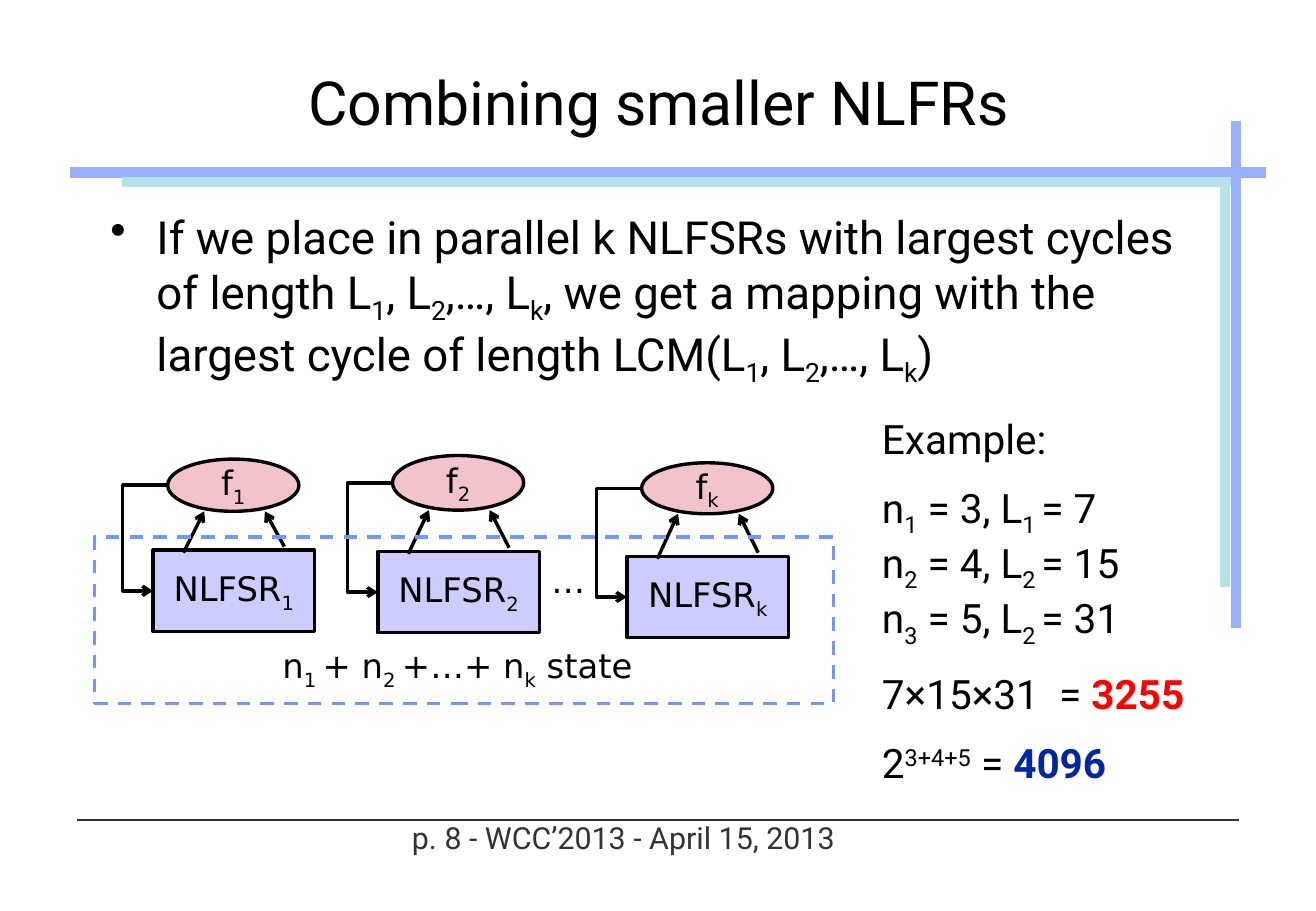
from lxml.etree import SubElement
from pptx import Presentation
from pptx.dml.color import RGBColor
from pptx.enum.dml import MSO_LINE
from pptx.enum.shapes import MSO_CONNECTOR as LINK, MSO_SHAPE as SHAPE
from pptx.enum.text import MSO_ANCHOR as ANCHOR, MSO_AUTO_SIZE as FIT, PP_ALIGN as ALIGN
from pptx.oxml.ns import qn
from pptx.util import Inches, Pt

SANS, DIAGRAM = "Roboto", "DejaVu Sans"
BLACK = "000000"

# Between bars the text is lowered, between carets it is raised.
TITLE = "Combining smaller NLFRs"
FOOTER = "p. 8 - WCC’2013 - April 15, 2013"
CLAIM = ("If we place in parallel k NLFSRs with largest cycles of length "
         "L|1|, L|2|,…, L|k|, we get a mapping with the largest cycle of length "
         "LCM(L|1|, L|2|,…, L|k|)")
STATE = "n|1 |+ n|2 |+…+ n|k| state"
# text, highlighted result, its colour, paragraph spacing
EXAMPLE = [
    ("Example:", "", BLACK, {"space_after": Pt(12)}),
    ("n|1| = 3, L|1 |= 7", "", BLACK, {}),
    ("n|2| = 4, L|2 |= 15", "", BLACK, {}),
    ("n|3| = 5, L|2 |= 31", "", BLACK, {}),
    ("7×15×31  = ", "3255", "FF0000", {"space_before": Pt(12)}),
    ("2^3+4+5^ = ", "4096", "00279F", {"space_before": Pt(12)}),
]
# index, box left, box top, oval top, oval height
REGISTERS = [("1", 1.26, 4.53, 3.78, 0.43),
             ("2", 3.11, 4.54, 3.75, 0.45),
             ("k", 5.16, 4.58, 3.81, 0.42)]
# start, end, colour, width in points
RULES = [((0.63, 6.75), (10.2, 6.75), "333333", 1.5),
         ((0.58, 1.42), (10.42, 1.42), "99B1FF", 6),
         ((1, 1.5), (10.17, 1.5), "B5E1E7", 6),
         ((10.08, 1.5), (10.08, 4.83), "B5E1E7", 6),
         ((10.17, 1), (10.17, 5.17), "99B1FF", 6)]
BOX_WIDTH, BOX_HEIGHT = 1.33, 0.67
OVAL_INSET, OVAL_WIDTH = 0.12, 1.08
LOOP_REACH = 0.25

deck = Presentation()
deck.slide_width, deck.slide_height = Inches(10.83), Inches(7.5)
page = deck.slides.add_slide(deck.slide_layouts[5])


def color(value):
    return RGBColor.from_string(value)


def assign(target, values):
    for name, value in values.items():
        setattr(target, name, value)


def add_run(para, text, size, font, ink=BLACK, bold=False, baseline=0):
    run = para.add_run()
    run.text = text
    assign(run.font, {"size": Pt(size), "name": font, "bold": bold})
    run.font.color.rgb = color(ink)
    if baseline:
        run._r.get_or_add_rPr().set("baseline", str(baseline * 1000))


def write(para, text, size, font, ink=BLACK):
    """Add text to a paragraph, turning |x| into subscript and ^x^ into superscript."""
    mark, shift = ("^", 30) if "^" in text else ("|", -25)
    for index, part in enumerate(text.split(mark)):
        if part:
            add_run(para, part, size, font, ink, baseline=shift * (index % 2))


def set_frame(frame, inset=None, **values):
    assign(frame, values)
    if inset is not None:
        assign(frame, {f"margin_{side}": Inches(inset)
                       for side in ("left", "top", "right", "bottom")})


def text_box(place, inset=None, wrap=True):
    box = page.shapes.add_textbox(*map(Inches, place))
    set_frame(box.text_frame, inset, word_wrap=wrap)
    return box.text_frame


def label(frame, text, size, font, ink=BLACK, align=ALIGN.CENTER):
    para = frame.paragraphs[0]
    para.alignment = align
    write(para, text, size, font, ink)


def draw_shape(kind, place, fill=None, ink=BLACK):
    shape = page.shapes.add_shape(kind, *map(Inches, place))
    shape.shadow.inherit = False
    if fill:
        shape.fill.solid()
        shape.fill.fore_color.rgb = color(fill)
    else:
        shape.fill.background()
    shape.line.color.rgb = color(ink)
    shape.line.width = Pt(2)
    return shape


def draw_line(start, end, ink=BLACK, width=2, kind=LINK.STRAIGHT, arrow=False):
    line = page.shapes.add_connector(kind, *map(Inches, start + end))
    line.line.color.rgb = color(ink)
    line.line.width = Pt(width)
    if arrow:
        SubElement(line.line._get_or_add_ln(), qn("a:tailEnd"), type="arrow")
    SubElement(line._element.spPr, qn("a:effectLst"))
    return line


def draw_register(index, left, top, oval_top, oval_height):
    oval_left = left + OVAL_INSET
    oval_bottom = oval_top + oval_height
    parts = [(SHAPE.RECTANGLE, (left, top, BOX_WIDTH, BOX_HEIGHT), "CCCCFF", "NLFSR"),
             (SHAPE.OVAL, (oval_left, oval_top, OVAL_WIDTH, oval_height), "F3C3CC", "f")]
    for kind, place, fill, name in parts:
        frame = draw_shape(kind, place, fill).text_frame
        set_frame(frame, word_wrap=False, vertical_anchor=ANCHOR.MIDDLE)
        label(frame, f"{name}|{index}|", 20, DIAGRAM)

    loop = draw_line((oval_left, oval_top + oval_height / 2), (left, top + BOX_HEIGHT / 2),
                     kind=LINK.ELBOW, arrow=True)
    bend = round((OVAL_INSET + LOOP_REACH) / OVAL_INSET * 100000)
    guides = loop._element.spPr.find(qn("a:prstGeom")).get_or_add_avLst()
    SubElement(guides, qn("a:gd"), name="adj1", fmla=f"val {bend}")

    for tail, drop, head in [(0.25, 0.02, 0.42), (1.08, -0.03, 0.92)]:
        draw_line((left + tail, top + drop), (left + head, oval_bottom), arrow=True)


for rule in RULES:
    draw_line(*rule)
label(text_box((3.19, 6.7, 3.88, 0.38), 0.04, wrap=False), FOOTER, 18, SANS, "333333")

title = page.shapes.title
assign(title, {"left": Inches(0.83), "top": Inches(0.33),
               "width": Inches(9.18), "height": Inches(1)})
set_frame(title.text_frame, 0.08, word_wrap=True, auto_size=FIT.NONE,
          vertical_anchor=ANCHOR.MIDDLE)
label(title.text_frame, TITLE, 36, SANS)

claim = text_box((0.81, 1.67, 9.1, 1.6))
label(claim, CLAIM, 27, SANS, align=ALIGN.LEFT)
bullet = claim.paragraphs[0]
bullet.space_before = Pt(5.4)
properties = bullet._p.get_or_add_pPr()
assign_indent = {"marL": Inches(0.38), "indent": -Inches(0.38)}
for name, value in assign_indent.items():
    properties.set(name, str(int(value)))
SubElement(properties, qn("a:buChar"), char="•")

for register in REGISTERS:
    draw_register(*register)
draw_shape(SHAPE.RECTANGLE, (0.78, 4.42, 6.08, 1.37),
           ink="7395FF").line.dash_style = MSO_LINE.DASH
label(text_box((4.44, 4.56, 0.43, 0.44), wrap=False), "…", 20, DIAGRAM)
label(text_box((2.2, 5.26, 3.13, 0.44)), STATE, 20, DIAGRAM)

example = text_box((7.16, 3.36, 2.76, 3.03))
for row, (text, result, ink, spacing) in enumerate(EXAMPLE):
    para = example.add_paragraph() if row else example.paragraphs[0]
    assign(para, spacing)
    write(para, text, 24, SANS)
    if result:
        add_run(para, result, 24, SANS, ink, bold=True)

deck.save("out.pptx")
